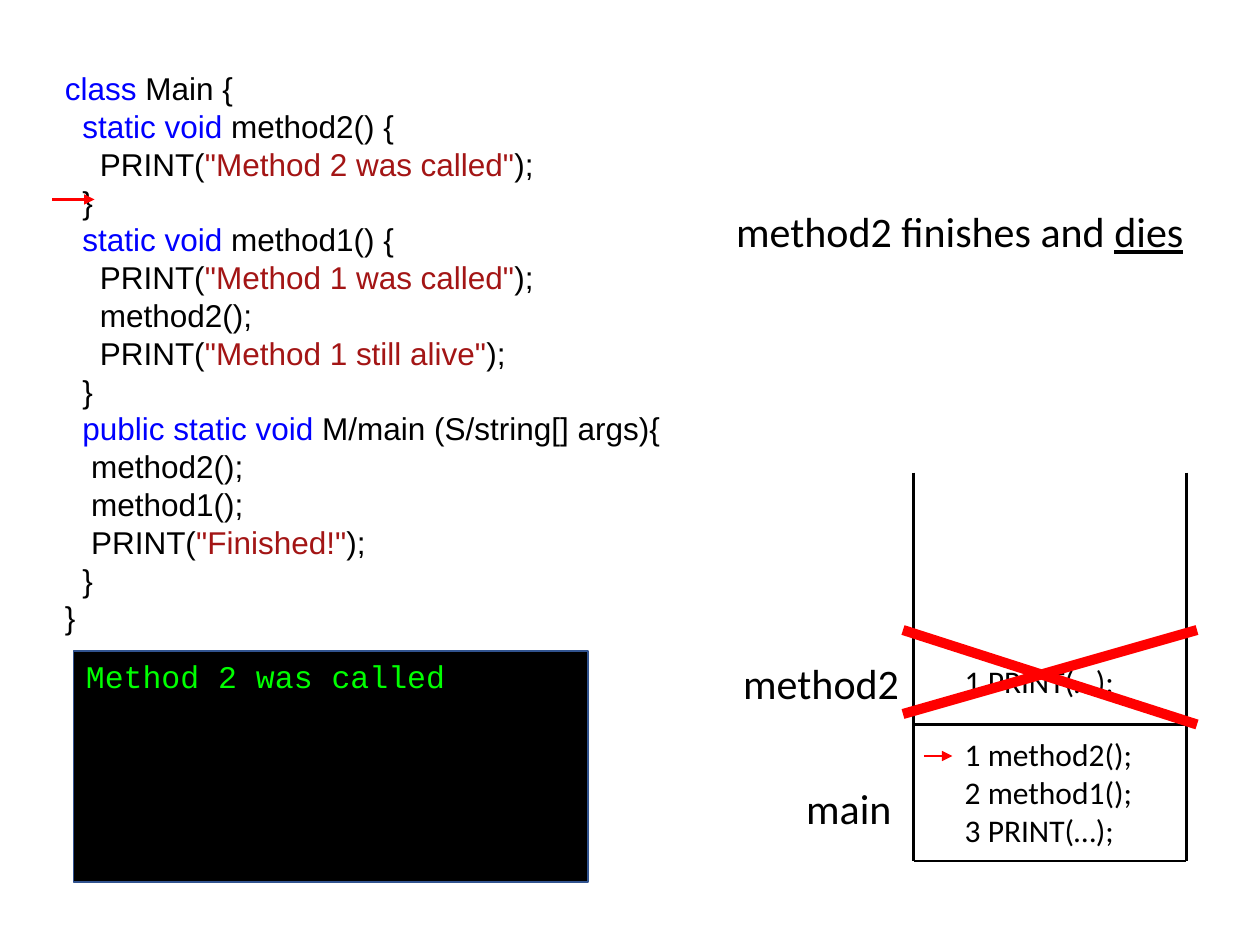
from lxml.etree import SubElement
from pptx import Presentation
from pptx.dml.color import RGBColor
from pptx.enum.shapes import MSO_CONNECTOR as Connector, MSO_SHAPE as Shape
from pptx.enum.text import MSO_ANCHOR as Anchor, MSO_AUTO_SIZE as AutoSize, PP_ALIGN as Align
from pptx.oxml.ns import qn
from pptx.util import Inches, Pt

COLORS = {"text": "000000", "keyword": "0000FF", "string": "A31515", "mark": "FF0000",
          "console": "000000", "console_edge": "31538F", "output": "00FF00"}
FONTS = {
    "code": {"name": "Arial", "size": Pt(18)},
    "console": {"name": "Courier New", "size": Pt(18)},
    "label": {"name": "Calibri", "size": Pt(24)},
    "frame": {"name": "Calibri", "size": Pt(18)},
}
COLUMNS, ROWS = 120, 90
CELL = Inches(10) / COLUMNS

CODE = [
    [("class", "keyword"), (" Main {", "text")],
    [("  ", "text"), ("static void", "keyword"), (" method2() {", "text")],
    [("    PRINT(", "text"), ('"Method 2 was called"', "string"), (");", "text")],
    [("  }", "text")],
    [("  ", "text"), ("static void", "keyword"), (" method1() {", "text")],
    [("    PRINT(", "text"), ('"Method 1 was called"', "string"), (");", "text")],
    [("    method2();", "text")],
    [("    PRINT(", "text"), ('"Method 1 still alive"', "string"), (");", "text")],
    [("  }", "text")],
    [("  ", "text"), ("public static void", "keyword"), (" M/main (S/string[] args){", "text")],
    [("   method2();", "text")],
    [("   method1();", "text")],
    [("   PRINT(", "text"), ('"Finished!"', "string"), (");", "text")],
    [("  }", "text")],
    [("}", "text")],
]


def grid(*cells):
    """Turn grid columns and rows into lengths."""
    return [round(cell * CELL) for cell in cells]


def color(name):
    return RGBColor.from_string(COLORS[name])


def write(shape, lines, font, align=Align.LEFT, anchor=Anchor.TOP, spacing=None):
    """Fill a shape with lines, each a list of (text, colour name) runs."""
    frame = shape.text_frame
    settings = {"word_wrap": True, "auto_size": AutoSize.NONE, "vertical_anchor": anchor}
    for key, value in settings.items():
        setattr(frame, key, value)
    for index, line in enumerate(lines):
        paragraph = frame.add_paragraph() if index else frame.paragraphs[0]
        paragraph.alignment = align
        if spacing:
            paragraph.line_spacing = spacing
        for text, color_name in line:
            run = paragraph.add_run()
            run.text = text
            for key, value in FONTS[font].items():
                setattr(run.font, key, value)
            run.font.color.rgb = color(color_name)


def add_text(slide, box, lines, font, **options):
    write(slide.shapes.add_textbox(*grid(*box)), lines, font, **options)


def add_line(slide, start, end, color_name="text", width=1.5, arrow=False):
    line = slide.shapes.add_connector(Connector.STRAIGHT, *grid(*start, *end))
    line.line.color.rgb = color(color_name)
    line.line.width = Pt(width)
    if arrow:
        SubElement(line.line._get_or_add_ln(), qn("a:tailEnd"), type="triangle")
    SubElement(line._element.spPr, qn("a:effectLst"))


def add_heading(slide, left, top, width, height):
    title = slide.shapes.title
    title.left, title.top, title.width, title.height = grid(left, top, width, height)
    write(title, [[("method2 finishes and ", "text"), ("dies", "text")]], "label")
    title.text_frame.paragraphs[0].runs[-1].font.underline = True


def add_code(slide, left, top, width, height):
    add_text(slide, (left, top, width, height), CODE, "code", spacing=Pt(21.6))
    pointer = top + 13
    add_line(slide, (left, pointer), (left + 4, pointer), "mark", 1.25, arrow=True)


def add_console(slide, left, top, width, height):
    console = slide.shapes.add_shape(Shape.RECTANGLE, *grid(left, top, width, height))
    console.shadow.inherit = False
    console.fill.solid()
    console.fill.fore_color.rgb = color("console")
    console.line.color.rgb = color("console_edge")
    console.line.width = Pt(1)
    write(console, [[("Method 2 was called", "output")]], "console")


def add_call_stack(slide, left, top, width, height):
    """Draw the open-topped stack with its two frames, the upper one crossed out."""
    right, bottom = left + width, top + height
    divider = bottom - 13
    for side in (left, right):
        add_line(slide, (side, top), (side, bottom))
    for level in (divider, bottom):
        add_line(slide, (left, level), (right, level))

    labels = [("method2", left - 17.4, divider - 7, 17.4), ("main", left - 11.4, divider + 4.9, 10.7)]
    for name, label_left, label_top, label_width in labels:
        add_text(slide, (label_left, label_top, label_width, 6), [[(name, "text")]], "label")

    frames = [(["1 PRINT(…);"], divider - 6.5, 4.8),
              (["1 method2();", "2 method1();", "3 PRINT(…);"], divider + 0.4, 12.1)]
    for calls, frame_top, frame_height in frames:
        add_text(slide, (left + 3.7, frame_top, width - 3.7, frame_height),
                 [[(call, "text")] for call in calls], "frame")

    cross_top = divider - 9
    for start, end in ((cross_top, divider), (divider - 1, cross_top)):
        add_line(slide, (left - 1, start), (right + 1, end), "mark", 5.75)
    pointer = divider + 3
    add_line(slide, (left + 1, pointer), (left + 3.7, pointer), "mark", 0.75, arrow=True)


def main():
    presentation = Presentation()
    presentation.slide_width, presentation.slide_height = grid(COLUMNS, ROWS)
    slide = presentation.slides.add_slide(presentation.slide_layouts[5])
    add_code(slide, 5, 6, 92, 55.7)
    add_console(slide, 7, 62, 49, 22)
    add_call_stack(slide, 87, 45, 26, 37)
    add_heading(slide, 68.9, 19, 45.5, 6)
    presentation.save("out.pptx")


if __name__ == "__main__":
    main()
